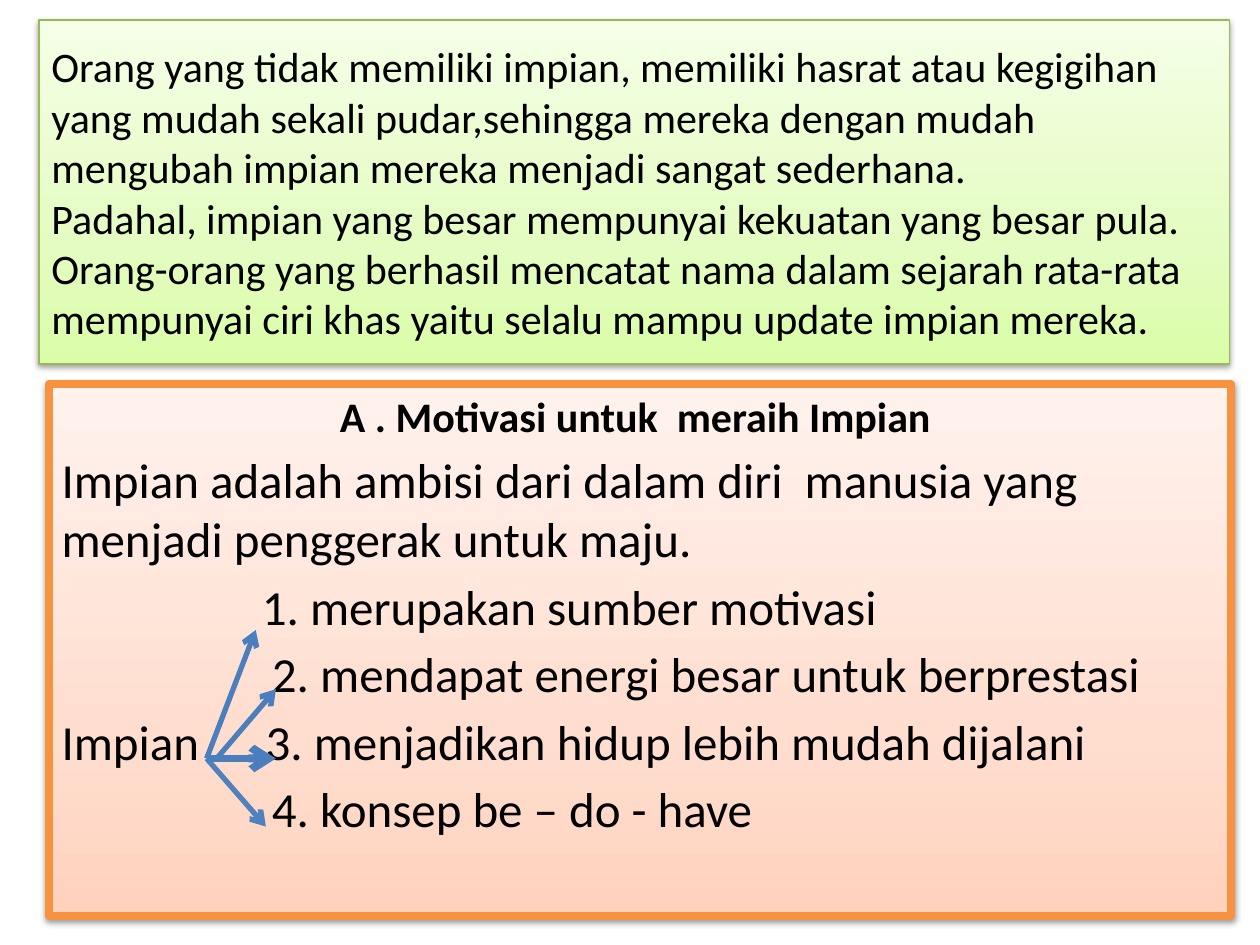
from copy import deepcopy

from lxml import etree
from pptx import Presentation
from pptx import util as u
from pptx.dml.color import RGBColor
from pptx.enum import shapes, text
from pptx.oxml import parse_xml
from pptx.oxml.ns import nsdecls, qn

COLOURS = {
    "ink": "000000",
    "green edge": "98B955",
    "orange edge": "F69240",
    "arrow": "4B7EBC",
    "lower arrow": "4F81BD",
}
GREEN = ("DAFDA7", "E4FCC2", "F5FFE7")
PEACH = ("FFD2BD", "FFDED0", "FFF2ED")
STOPS = (0, 0.35, 1)


class Board:
    """Draws panels, paragraphs and arrows on a grid of 100 columns and 75 rows."""

    font = "Calibri"

    def __init__(self):
        self.deck = Presentation()
        self.deck.slide_width, self.deck.slide_height = u.Inches(10), u.Inches(7.5)
        self.cell = self.deck.slide_width / 100
        self.page = self.deck.slides.add_slide(self.deck.slide_layouts[6])

    def grid(self, *lengths):
        return [u.Emu(round(length * self.cell)) for length in lengths]

    def panel(self, place, shades, edge, weight, anchor):
        box = self.page.shapes.add_shape(shapes.MSO_SHAPE.RECTANGLE, *self.grid(*place))
        box.fill.gradient()
        box.fill.gradient_angle = 90
        stop_list = box._element.spPr.find(".//" + qn("a:gsLst"))
        stop_list.insert(1, deepcopy(stop_list[0]))
        for stop, position, shade in zip(box.fill.gradient_stops, STOPS, shades):
            stop.position = position
            stop.color.rgb = RGBColor.from_string(shade)
        box.line.color.rgb = RGBColor.from_string(COLOURS[edge])
        box.line.width = u.Pt(weight)
        box._element.spPr.append(parse_xml(
            f'<a:effectLst {nsdecls("a")}><a:outerShdw blurRad="40000" dist="20000" '
            f'dir="5400000" rotWithShape="0"><a:srgbClr val="{COLOURS["ink"]}">'
            '<a:alpha val="38000"/></a:srgbClr></a:outerShdw></a:effectLst>'))
        box.text_frame.word_wrap = True
        box.text_frame.vertical_anchor = anchor
        return box

    def paragraph(self, box, lines, size, bold=False, centred=False, before=0, indent=0, tab=0):
        frame = box.text_frame
        para = frame.paragraphs[0] if not frame.text else frame.add_paragraph()
        para.alignment = text.PP_ALIGN.CENTER if centred else text.PP_ALIGN.LEFT
        para.space_before = u.Pt(before)
        settings = para._p.get_or_add_pPr()
        if indent:
            settings.set("marL", str(self.grid(indent)[0]))
        if tab:
            stops = etree.SubElement(settings, qn("a:tabLst"))
            etree.SubElement(stops, qn("a:tab"), pos=str(self.grid(tab)[0]), algn="l")
        for number, line in enumerate(lines):
            if number:
                para.add_line_break()
            span = para.add_run()
            span.text = line
            span.font.name, span.font.size, span.font.bold = self.font, u.Pt(size), bold
            span.font.color.rgb = RGBColor.from_string(COLOURS["ink"])

    def arrow(self, start, end, colour="arrow", weight=3):
        line = self.page.shapes.add_connector(
            shapes.MSO_CONNECTOR.STRAIGHT, *self.grid(*start, *end))
        line.line.color.rgb = RGBColor.from_string(COLOURS[colour])
        line.line.width = u.Pt(weight)
        etree.SubElement(line.line._get_or_add_ln(), qn("a:tailEnd"), type="arrow")
        etree.SubElement(line._element.spPr, qn("a:effectLst"))


board = Board()

opening = board.panel((3.1, 1.6, 94.5, 27.3), GREEN, "green edge", 0.75, text.MSO_ANCHOR.MIDDLE)
board.paragraph(opening, [
    "Orang yang tidak memiliki impian, memiliki hasrat atau kegigihan yang mudah sekali "
    "pudar,sehingga mereka dengan mudah mengubah impian mereka menjadi sangat sederhana.",
    "Padahal, impian yang besar mempunyai kekuatan yang besar pula.",
    "Orang-orang yang berhasil mencatat nama dalam sejarah rata-rata mempunyai ciri khas "
    "yaitu selalu mampu update impian mereka.",
], 24)

motivation = board.panel((3.9, 30.5, 93.8, 42.2), PEACH, "orange edge", 4.5, text.MSO_ANCHOR.TOP)
board.paragraph(motivation, ["A . Motivasi untuk  meraih Impian "], 24,
                bold=True, centred=True, before=5)
for wording, indent, tab in (
    ("Impian adalah ambisi dari dalam diri  manusia yang menjadi penggerak untuk maju. ", 0, 0),
    ("1. merupakan sumber motivasi", 15.9, 0),
    ("2. mendapat energi besar untuk berprestasi", 16.7, 0),
    ("Impian\t3. menjadikan hidup lebih mudah dijalani", 0, 16.2),
    ("4. konsep be – do - have", 16.7, 0),
):
    board.paragraph(motivation, [wording], 28, before=5, indent=indent, tab=tab)

hub = (16.4, 60.2)
board.arrow(hub, (20.3, 50))
board.arrow(hub, (21.1, 65.6), colour="lower arrow")
board.arrow(hub, (21.9, 60.2), weight=4.5)
board.arrow((17.2, 60.2), (21.9, 54.7))

board.deck.save("out.pptx")
